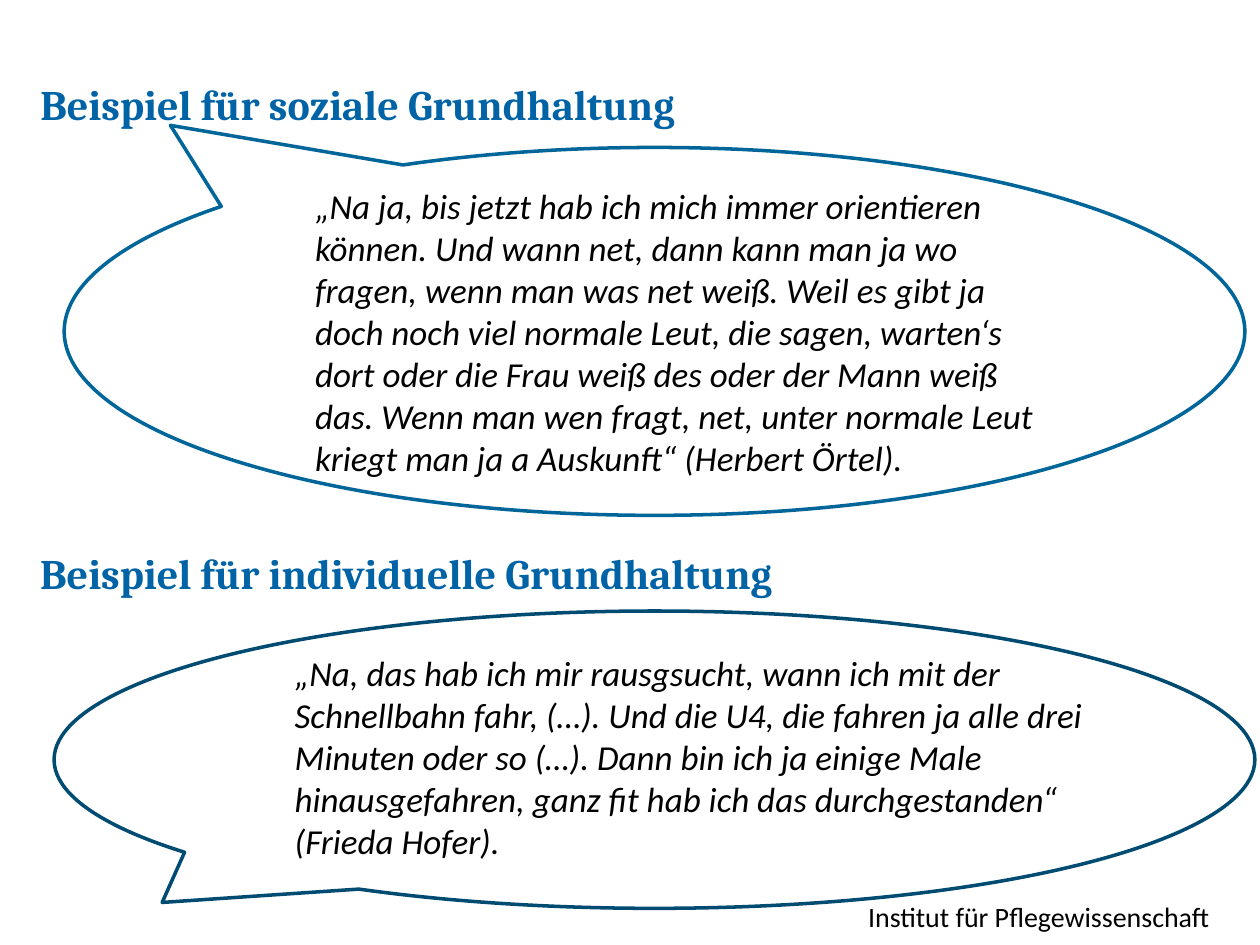
from dataclasses import dataclass
from typing import Optional

from pptx import Presentation
from pptx.dml.color import RGBColor
from pptx.enum.shapes import MSO_SHAPE
from pptx.enum.text import MSO_ANCHOR, MSO_AUTO_SIZE, PP_ALIGN
from pptx.util import Inches, Pt

CALLOUT = MSO_SHAPE.OVAL_CALLOUT
TOP, MIDDLE = MSO_ANCHOR.TOP, MSO_ANCHOR.MIDDLE
NO_AUTOFIT = MSO_AUTO_SIZE.NONE
LEFT = PP_ALIGN.LEFT

WHITE = RGBColor(0xFF, 0xFF, 0xFF)
BLACK = RGBColor(0x00, 0x00, 0x00)
HEADING_BLUE = RGBColor(0x00, 0x63, 0xA6)
SOCIAL_BLUE = RGBColor(0x00, 0x66, 0x99)
INDIVIDUAL_BLUE = RGBColor(0x00, 0x4B, 0x71)

SOCIAL_QUOTE = (
    "„Na ja, bis jetzt hab ich mich immer orientieren können. Und wann net, "
    "dann kann man ja wo fragen, wenn man was net weiß. Weil es gibt ja doch "
    "noch viel normale Leut, die sagen, warten‘s dort oder die Frau weiß des "
    "oder der Mann weiß das. Wenn man wen fragt, net, unter normale Leut "
    "kriegt man ja a Auskunft“ (Herbert Örtel)."
)
INDIVIDUAL_QUOTE = (
    "„Na, das hab ich mir rausgsucht, wann ich mit der Schnellbahn fahr, (…). "
    "Und die U4, die fahren ja alle drei Minuten oder so (…). Dann bin ich ja "
    "einige Male hinausgefahren, ganz fit hab ich das durchgestanden“ "
    "(Frieda Hofer)."
)


@dataclass(frozen=True)
class Box:
    left: float
    top: float
    width: float
    height: float

    def lengths(self) -> tuple:
        return tuple(map(Inches, (self.left, self.top, self.width, self.height)))


@dataclass(frozen=True)
class Bubble:
    box: Box
    tail: tuple[float, float]
    line: RGBColor
    fill: Optional[RGBColor] = None


SOCIAL_BUBBLE = Bubble(Box(0.51, 1.17, 9.37, 2.92), (-0.41, -0.56), SOCIAL_BLUE, WHITE)
INDIVIDUAL_BUBBLE = Bubble(Box(0.43, 4.85, 9.53, 2.36), (-0.41, 0.48), INDIVIDUAL_BLUE)


def write_text(shape, text: str, font_name: str, size: int, color: RGBColor,
               bold: bool = False, italic: bool = False):
    frame = shape.text_frame
    frame.word_wrap = True
    frame.auto_size = NO_AUTOFIT
    frame.text = text
    paragraph = frame.paragraphs[0]
    paragraph.alignment = LEFT
    font = paragraph.font
    font.name, font.size = font_name, Pt(size)
    font.bold, font.italic = bold, italic
    font.color.rgb = color
    return paragraph


def write_heading(shape, text: str) -> None:
    shape.text_frame.vertical_anchor = TOP
    paragraph = write_text(shape, text, "Cambria", 24, HEADING_BLUE, bold=True)
    paragraph.line_spacing = Pt(29.8)


def write_quote(shape, text: str):
    return write_text(shape, text, "Calibri", 20, BLACK, italic=True)


def add_bubble(slide, bubble: Bubble):
    shape = slide.shapes.add_shape(CALLOUT, *bubble.box.lengths())
    shape.shadow.inherit = False
    shape.adjustments[0], shape.adjustments[1] = bubble.tail
    if bubble.fill is None:
        shape.fill.background()
    else:
        shape.fill.solid()
        shape.fill.fore_color.rgb = bubble.fill
    shape.line.color.rgb = bubble.line
    shape.line.width = Pt(2)
    return shape


def add_text_box(slide, box: Box):
    return slide.shapes.add_textbox(*box.lengths())


def main() -> None:
    presentation = Presentation()
    presentation.slide_width, presentation.slide_height = Inches(10), Inches(7.5)
    slide = presentation.slides.add_slide(presentation.slide_layouts[5])

    institute = add_text_box(slide, Box(6.89, 7.14, 2.83, 0.24))
    frame = institute.text_frame
    frame.margin_left = frame.margin_right = frame.margin_top = frame.margin_bottom = 0
    write_text(institute, "Institut für Pflegewissenschaft", "Calibri", 16, BLACK)
    frame.word_wrap = False

    title = slide.shapes.title
    title.left, title.top, title.width, title.height = Box(0.22, 0.56, 8.98, 0.47).lengths()
    write_heading(title, "Beispiel für soziale Grundhaltung")

    social = add_bubble(slide, SOCIAL_BUBBLE)
    social.text_frame.vertical_anchor = MIDDLE
    paragraph = write_quote(social, SOCIAL_QUOTE)
    properties = paragraph._p.get_or_add_pPr()
    properties.set("marL", str(Inches(0.52)))
    properties.set("indent", "0")

    heading = add_text_box(slide, Box(0.22, 4.28, 8.82, 0.47))
    write_heading(heading, "Beispiel für individuelle Grundhaltung")

    add_bubble(slide, INDIVIDUAL_BUBBLE)
    write_quote(add_text_box(slide, Box(2.24, 5.12, 6.79, 1.78)), INDIVIDUAL_QUOTE)

    presentation.save("out.pptx")


if __name__ == "__main__":
    main()
